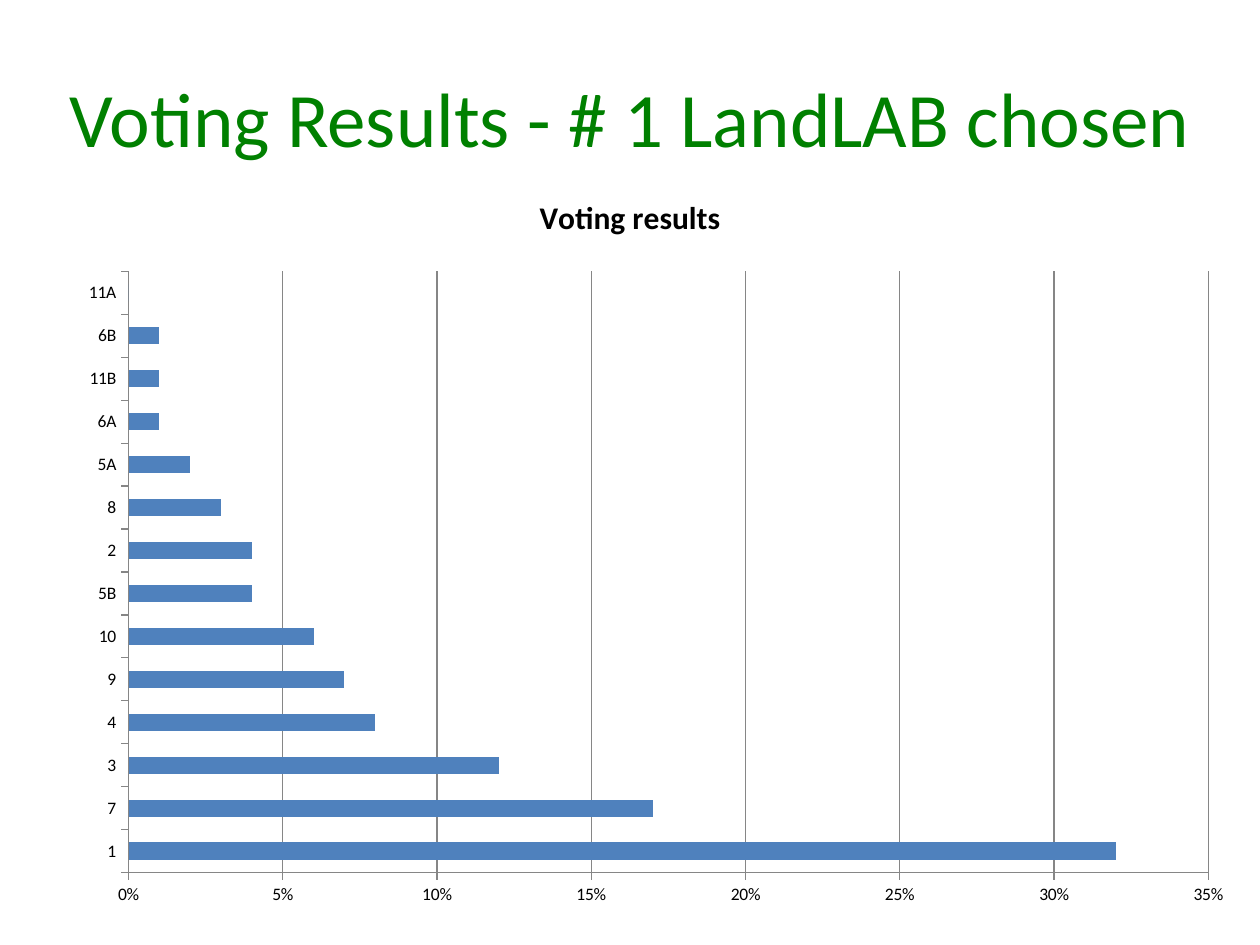
from lxml import etree
from pptx import Presentation
from pptx.chart.data import CategoryChartData
from pptx.dml.color import RGBColor
from pptx.enum.chart import XL_CHART_TYPE as ChartType, XL_TICK_MARK as Tick
from pptx.enum.text import MSO_ANCHOR as Anchor, PP_ALIGN as Align
from pptx.oxml.ns import qn
from pptx.util import Inches, Pt

COLORS = {"heading": "008000", "text": "000000", "bar": "4F81BD", "grid": "868686"}
FONT = "Calibri"
WIDTH, HEIGHT = Inches(10), Inches(7.5)
VOTES = {
    "1": 0.32, "7": 0.17, "3": 0.12, "4": 0.08, "9": 0.07, "10": 0.06, "5B": 0.04,
    "2": 0.04, "8": 0.03, "5A": 0.02, "6A": 0.01, "11B": 0.01, "6B": 0.01, "11A": 0,
}
PLOT_SHARES = {"x": 0.102, "y": 0.134, "w": 0.857, "h": 0.773}


def region(left, top, width, height):
    return int(left * WIDTH), int(top * HEIGHT), int(width * WIDTH), int(height * HEIGHT)


def style(font, size, color, bold=False):
    font.name, font.size, font.bold = FONT, Pt(size), bold
    font.color.rgb = RGBColor.from_string(COLORS[color])


def add_heading(slide, box, wording):
    frame = slide.shapes.add_textbox(*box).text_frame
    frame.word_wrap = True
    frame.vertical_anchor = Anchor.MIDDLE
    frame.text = wording
    heading = frame.paragraphs[0]
    heading.alignment = Align.CENTER
    style(heading.runs[0].font, 44, "heading")


def draw_line(line):
    line.color.rgb = RGBColor.from_string(COLORS["grid"])
    line.width = Pt(0.75)


def place_plot(chart, shares):
    plot_area = chart._chartSpace.find(".//" + qn("c:plotArea"))
    for old in plot_area.findall(qn("c:layout")):
        plot_area.remove(old)
    layout = etree.Element(qn("c:layout"))
    manual = etree.SubElement(layout, qn("c:manualLayout"))
    settings = {"layoutTarget": "inner", "xMode": "edge", "yMode": "edge", **shares}
    for tag, value in settings.items():
        etree.SubElement(manual, qn("c:" + tag)).set("val", str(value))
    plot_area.insert(0, layout)


def add_votes_chart(slide, box, votes):
    data = CategoryChartData(number_format="0%")
    data.categories = list(votes)
    data.add_series("Series 1", list(votes.values()))
    chart = slide.shapes.add_chart(ChartType.BAR_CLUSTERED, *box, data).chart
    style(chart.font, 10, "text")
    chart.has_legend = False
    chart.has_title = True
    title = chart.chart_title
    title.text_frame.text = "Voting results"
    title.include_in_layout = True
    style(title.text_frame.paragraphs[0].runs[0].font, 18, "text", bold=True)

    bars = chart.plots[0]
    bars.gap_width = 150
    bars.vary_by_categories = False
    fill = bars.series[0].format.fill
    fill.solid()
    fill.fore_color.rgb = RGBColor.from_string(COLORS["bar"])

    shares = chart.value_axis
    shares.minimum_scale, shares.maximum_scale, shares.major_unit = 0, 0.35, 0.05
    shares.has_major_gridlines = True
    draw_line(shares.major_gridlines.format.line)
    shares.tick_labels.number_format = "0%"
    shares.tick_labels.number_format_is_linked = False
    for axis in (chart.category_axis, shares):
        axis.major_tick_mark = Tick.OUTSIDE
        axis.minor_tick_mark = Tick.NONE
        draw_line(axis.format.line)
    place_plot(chart, PLOT_SHARES)


def main():
    deck = Presentation()
    deck.slide_width, deck.slide_height = WIDTH, HEIGHT
    slide = deck.slides.add_slide(deck.slide_layouts[6])
    add_heading(slide, region(0, 0.04, 1, 0.167), "Voting Results - # 1 LandLAB chosen")
    add_votes_chart(slide, region(0, 0.177, 1, 0.823), VOTES)
    deck.save("out.pptx")


if __name__ == "__main__":
    main()
